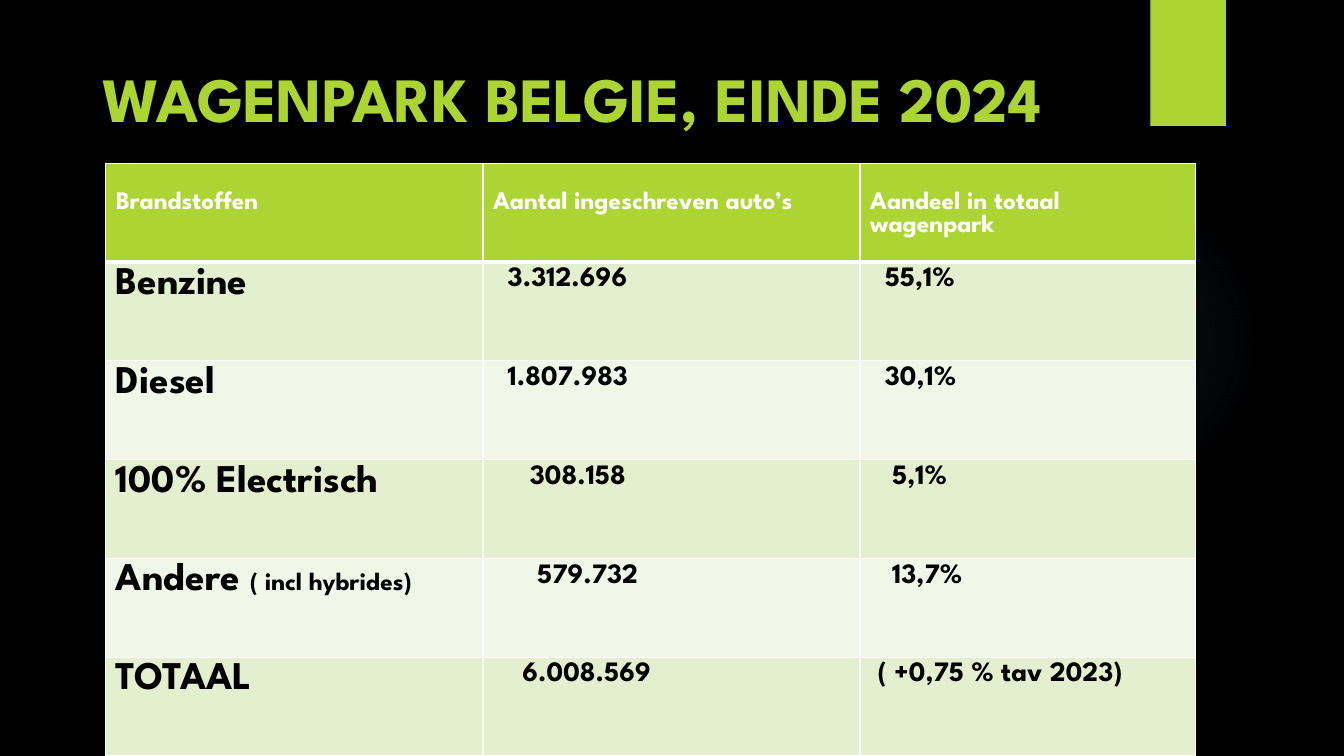
from dataclasses import dataclass

from lxml import etree
from pptx import Presentation
from pptx import util as u
from pptx.dml.color import RGBColor
from pptx.enum import shapes, text
from pptx.oxml import ns


@dataclass(frozen=True)
class Theme:
    font: str = "League Spartan"
    back: str = "000000"
    lime: str = "ACD433"
    glow: str = "7AC4F0"
    ink: str = "000000"
    white: str = "FFFFFF"
    bands: tuple = ("E3EFCE", "F1F7E8")
    title: int = 45
    label: int = 28
    value: int = 20
    head: int = 18


T = Theme()
WIDE, HIGH = 13.33, 7.5
PAD, SPACE = 0.1, 0.073  # cell inset and one step of indent

HEADS = ("Brandstoffen", "Aantal ingeschreven auto’s", "Aandeel in totaal wagenpark")
# label, small note, (number, indent steps), (share, indent steps)
FUELS = (
    ("Benzine", "", ("3.312.696", 2), ("55,1%", 2)),
    ("Diesel", "", ("1.807.983", 2), ("30,1%", 2)),
    ("100% Electrisch", "", ("308.158", 5), ("5,1%", 3)),
    ("Andere ", "( incl hybrides)", ("579.732", 6), ("13,7%", 3)),
    ("TOTAAL", "", ("6.008.569", 4), ("( +0,75 % tav 2023)", 1)),
)


def inch(box):
    return [u.Inches(n) for n in box]


def apply(item, values):
    for name, value in values.items():
        setattr(item, name, value)


def paint(fill, color):
    fill.solid()
    fill.fore_color.rgb = RGBColor.from_string(color)


def write(para, words, size, color):
    run = para.add_run()
    run.text = words
    apply(run.font, {"name": T.font, "size": u.Pt(size), "bold": True})
    run.font.color.rgb = RGBColor.from_string(color)


def shape(slide, kind, box):
    item = slide.shapes.add_shape(kind, *inch(box))
    item.shadow.inherit = False
    item.line.fill.background()
    return item


# Background glow and tab at the top right
def decor(slide, box):
    left, top, wide, high = box
    paint(slide.background.fill, T.back)
    glow = shape(slide, shapes.MSO_SHAPE.OVAL, (left + wide - 3.92, top + 1.83, 3.08, 3.08))
    stops = "".join(
        f'<a:gs pos="{at}000"><a:srgbClr val="{T.glow}"><a:alpha val="{alpha}000"/></a:srgbClr></a:gs>'
        for at, alpha in ((0, 7), (36, 6), (69, 0)))
    grad = etree.fromstring(
        f'<a:gradFill {ns.nsdecls("a")}><a:gsLst>{stops}</a:gsLst><a:path path="circle">'
        '<a:fillToRect l="50000" t="50000" r="50000" b="50000"/></a:path></a:gradFill>')
    glow.element.spPr.find(ns.qn("a:prstGeom")).addnext(grad)
    tab = shape(slide, shapes.MSO_SHAPE.RECTANGLE, (left + wide - 1.92, top, 0.75, high / 6))
    paint(tab.fill, T.lime)


# Heading
def heading(slide, box):
    title = slide.shapes.title
    apply(title, dict(zip(("left", "top", "width", "height"), inch(box))))
    frame = title.text_frame
    apply(frame, {"word_wrap": True, "auto_size": text.MSO_AUTO_SIZE.NONE,
                  "vertical_anchor": text.MSO_ANCHOR.TOP})
    para = frame.paragraphs[0]
    para.alignment = text.PP_ALIGN.LEFT
    write(para, "WAGENPARK BELGIE, EINDE 2024", T.title, T.lime)


def border(cell, sides):
    props = cell._tc.get_or_add_tcPr()
    for at, (side, width) in enumerate(sides.items()):
        line = etree.Element(ns.qn(f"a:ln{side}"), w=str(u.Pt(width)))
        fill = etree.SubElement(line, ns.qn("a:solidFill"))
        etree.SubElement(fill, ns.qn("a:srgbClr"), val=T.white)
        props.insert(at, line)


def fill_cell(cell, row, runs, color, steps=0):
    paint(cell.fill, T.bands[(row - 1) % 2] if row else T.lime)
    border(cell, {"L": 1, "R": 1, "T": 3 if row == 1 else 1, "B": 1 if row else 3})
    apply(cell, {"margin_left": u.Inches(PAD + steps * SPACE),
                 "margin_top": u.Inches(0.05 if row else 0.28)})
    for words, size in runs:
        write(cell.text_frame.paragraphs[0], words, size, color)


# Table of fuels
def fleet(slide, box):
    count = len(FUELS) + 1
    table = slide.shapes.add_table(count, len(HEADS), *inch(box)).table
    for col, share in zip(table.columns, (0.346, 0.346, 0.308)):
        col.width = u.Inches(box[2] * share)
    for row in table.rows:
        row.height = u.Inches(box[3] / count)
    for col, words in enumerate(HEADS):
        fill_cell(table.cell(0, col), 0, [(words, T.head)], T.white)
    for row, (label, note, *values) in enumerate(FUELS, 1):
        runs = [(label, T.label)] + ([(note, T.head)] if note else [])
        fill_cell(table.cell(row, 0), row, runs, T.ink)
        for col, (words, steps) in enumerate(values, 1):
            fill_cell(table.cell(row, col), row, [(words, T.value)], T.ink, steps)


def main():
    deck = Presentation()
    apply(deck, {"slide_width": u.Inches(WIDE), "slide_height": u.Inches(HIGH)})
    slide = deck.slides.add_slide(deck.slide_layouts[5])
    decor(slide, (0, 0, WIDE, HIGH))
    fleet(slide, (1.05, 1.62, 10.81, HIGH - 1.62))
    heading(slide, (0.92, 0.54, 11.5, 0.78))
    deck.save("out.pptx")


if __name__ == "__main__":
    main()
